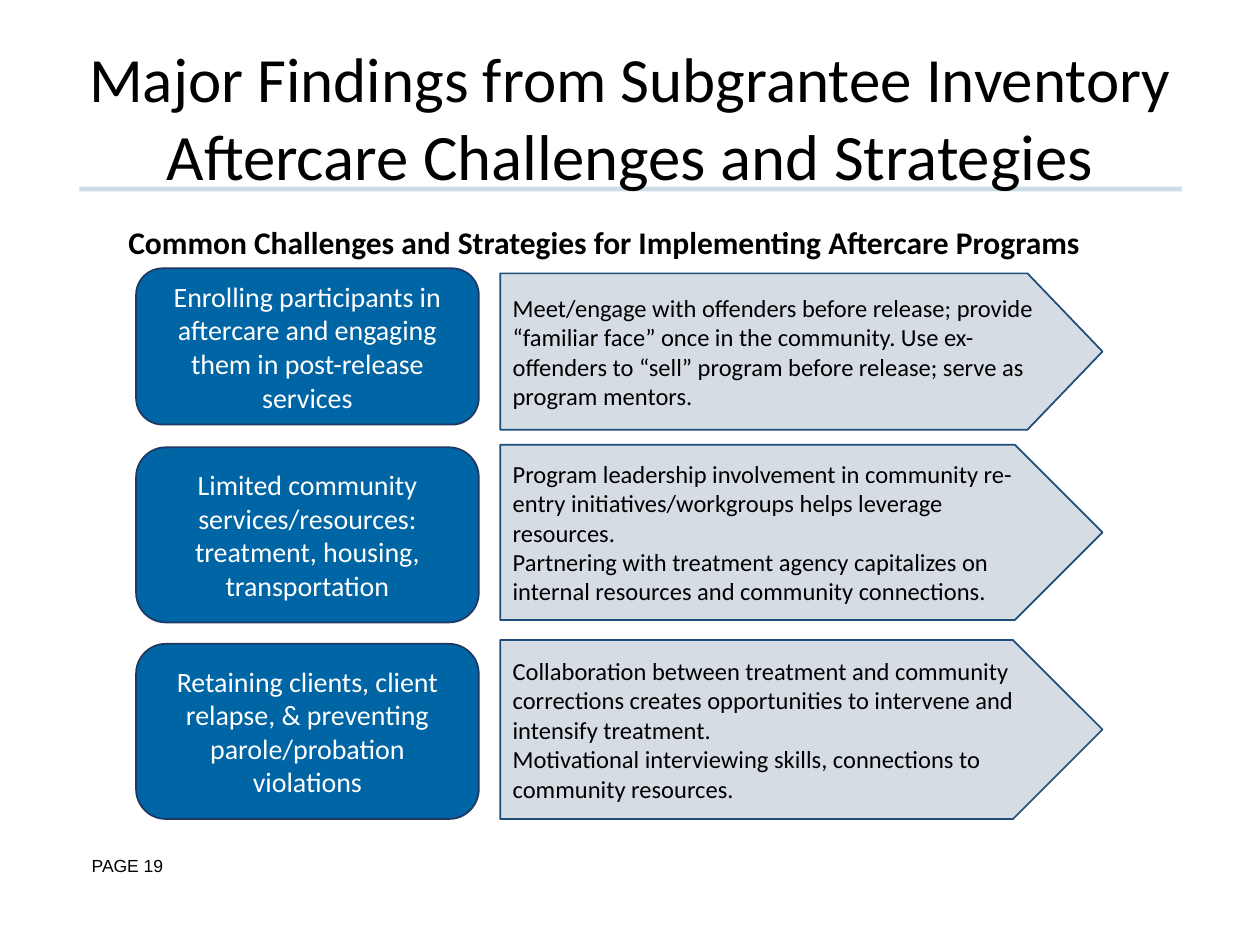
from dataclasses import dataclass
from typing import Any

from lxml.etree import SubElement
from pptx import Presentation
from pptx.dml.color import RGBColor
from pptx.enum.shapes import MSO_CONNECTOR as Connector, MSO_SHAPE as Shape
from pptx.enum.text import MSO_ANCHOR as Anchor, PP_ALIGN as Align
from pptx.oxml.ns import qn
from pptx.util import Inches, Pt

BLACK = RGBColor(0x00, 0x00, 0x00)
WHITE = RGBColor(0xFF, 0xFF, 0xFF)
RULE_BLUE = RGBColor(0x00, 0x55, 0x81)
CHALLENGE_FILL = RGBColor(0x00, 0x65, 0xA4)
CHALLENGE_LINE = RGBColor(0x1F, 0x37, 0x63)
STRATEGY_FILL = RGBColor(0xD5, 0xDC, 0xE4)
STRATEGY_LINE = RGBColor(0x1F, 0x4D, 0x78)

ROWS = [
    ("Enrolling participants in aftercare and engaging them in post-release services",
     ["Meet/engage with offenders before release; provide “familiar face” once in the "
      "community. Use ex-offenders to “sell” program before release; serve as program mentors."],
     (2.13, 1.24), (2.17, 1.24), 0.48),
    ("Limited community services/resources: treatment, housing, transportation",
     ["Program leadership involvement in community re-entry initiatives/workgroups helps "
      "leverage resources.",
      "Partnering with treatment agency capitalizes on internal resources and community "
      "connections."],
     (3.55, 1.39), (3.53, 1.39), 0.5),
    ("Retaining clients, client relapse, & preventing parole/probation violations",
     ["Collaboration between treatment and community corrections creates opportunities to "
      "intervene and intensify treatment.",
      "Motivational interviewing skills, connections to community resources."],
     (5.11, 1.39), (5.08, 1.42), 0.5),
]


@dataclass
class SlideBuilder:
    """Draws styled elements on the current slide."""

    page: Any
    font: str = "Calibri"

    def fill_text(self, frame, paragraphs, size, color, align=Align.LEFT, bold=False, font=None):
        frame.word_wrap = True
        for index, text in enumerate(paragraphs):
            para = frame.add_paragraph() if index else frame.paragraphs[0]
            para.text = text
            para.alignment = align
            para.font.name = font or self.font
            para.font.size = Pt(size)
            para.font.bold = bold
            para.font.color.rgb = color

    def text(self, area, text, size, anchor=Anchor.MIDDLE, **style):
        box = self.page.shapes.add_textbox(*map(Inches, area))
        box.text_frame.vertical_anchor = anchor
        self.fill_text(box.text_frame, [text], size, BLACK, **style)
        return box

    def title(self, area, lines):
        box = self.text(area, "", 36, align=Align.CENTER)
        para = box.text_frame.paragraphs[0]
        for index, (text, size) in enumerate(lines):
            if index:
                para.add_line_break()
            span = para.add_run()
            span.text = text
            span.font.size = Pt(size)

    def rule(self, left, right, top, color, width, opacity):
        line = self.page.shapes.add_connector(
            Connector.STRAIGHT, Inches(left), Inches(top), Inches(right), Inches(top))
        line.line.color.rgb = color
        line.line.width = Pt(width)
        properties = line._element.spPr
        tint = next(properties.iter(qn("a:srgbClr")))
        SubElement(tint, qn("a:alpha"), val=str(opacity * 1000))
        SubElement(properties, qn("a:effectLst"))

    def panel(self, kind, area, adjustment, fill, outline, paragraphs, size, color, align):
        shape = self.page.shapes.add_shape(kind, *map(Inches, area))
        shape.adjustments[0] = adjustment
        shape.shadow.inherit = False
        shape.fill.solid()
        shape.fill.fore_color.rgb = fill
        shape.line.color.rgb = outline
        shape.line.width = Pt(1)
        shape.text_frame.vertical_anchor = Anchor.MIDDLE
        self.fill_text(shape.text_frame, paragraphs, size, color, align)

    def challenge(self, top, height, text):
        self.panel(Shape.ROUNDED_RECTANGLE, (1.08, top, 2.72, height), 0.17,
                   CHALLENGE_FILL, CHALLENGE_LINE, [text], 16, WHITE, Align.CENTER)

    def strategy(self, top, height, point, paragraphs):
        self.panel(Shape.PENTAGON, (3.97, top, 4.78, height), point,
                   STRATEGY_FILL, STRATEGY_LINE, paragraphs, 14, BLACK, Align.LEFT)


def main():
    deck = Presentation()
    deck.slide_width, deck.slide_height = Inches(10), Inches(7.5)
    builder = SlideBuilder(deck.slides.add_slide(deck.slide_layouts[6]))

    builder.text((0.63, 6.74, 1.06, 0.52), "PAGE 19", 10, Anchor.TOP, font="Arial")
    builder.rule(0.63, 9.38, 1.5, RULE_BLUE, 2.75, 20)
    builder.title((0.5, 0.3, 9, 1.25), [
        ("Major Findings from Subgrantee Inventory", 36),
        ("Aftercare Challenges and Strategies", 37),
    ])
    for challenge, strategies, challenge_span, strategy_span, point in ROWS:
        builder.challenge(*challenge_span, challenge)
        builder.strategy(*strategy_span, point, strategies)
    builder.text((0.92, 1.72, 8.18, 0.4),
                 "Common Challenges and Strategies for Implementing Aftercare Programs",
                 18, bold=True)
    deck.save("out.pptx")


if __name__ == "__main__":
    main()
